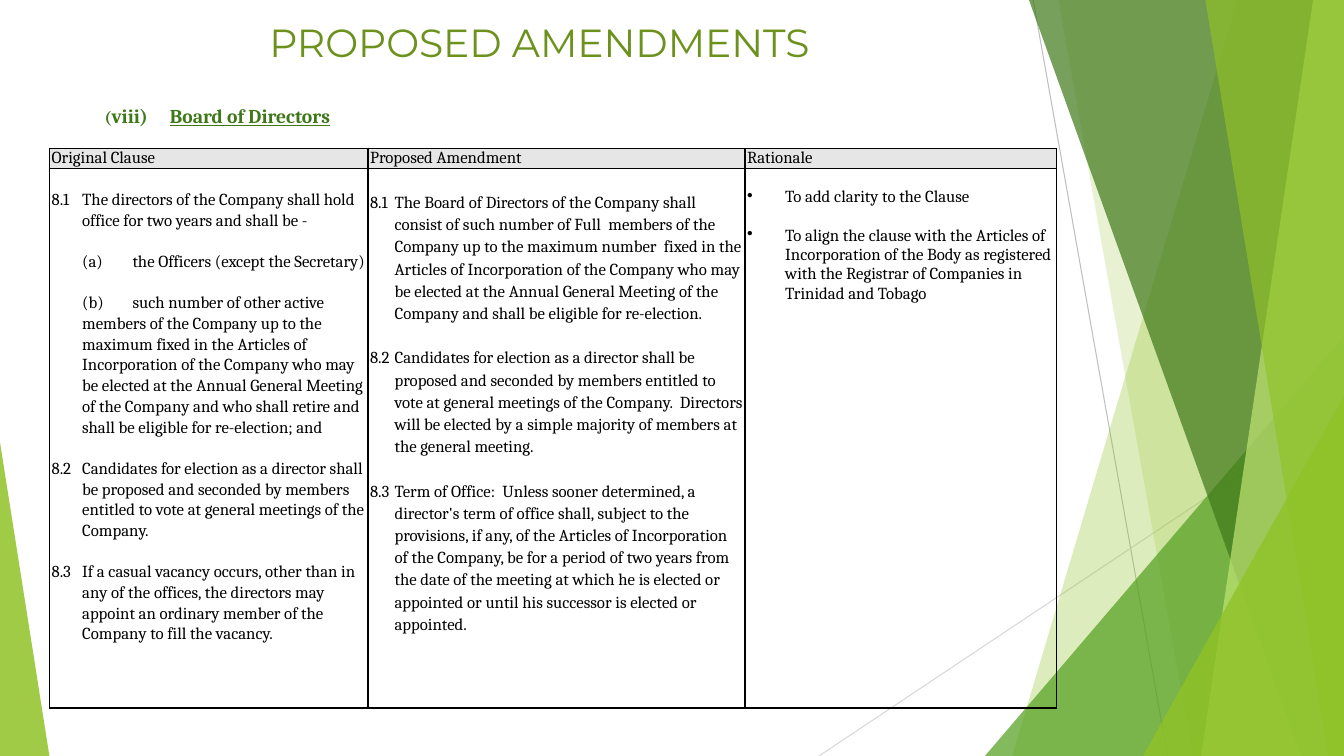
from lxml.etree import SubElement
from pptx import Presentation
from pptx.dml.color import RGBColor
from pptx.enum.shapes import MSO_CONNECTOR, MSO_SHAPE
from pptx.enum.text import MSO_ANCHOR, PP_ALIGN
from pptx.oxml import parse_xml
from pptx.oxml.ns import nsdecls, qn
from pptx.util import Pt


def color(code):
    return RGBColor.from_string(code)


def hang(para, left, first):
    """Indent a paragraph by left, its first line by first more."""
    props = para._p.get_or_add_pPr()
    props.set("marL", str(Pt(left)))
    props.set("indent", str(Pt(first)))
    props.set("defTabSz", str(Pt(36)))
    return props


deck = Presentation()
deck.slide_width, deck.slide_height = Pt(960), Pt(540)
slide = deck.slides.add_slide(deck.slide_layouts[6])
shapes = slide.shapes

# Thin lines behind the green panels
for x1, y1, x2, y2, shade in [
    (738, 0, 834, 540, "BFBFBF"),
    (960, 290, 585, 540, "D9D9D9"),
]:
    line = shapes.add_connector(MSO_CONNECTOR.STRAIGHT, Pt(x1), Pt(y1), Pt(x2), Pt(y2))
    line.line.color.rgb = color(shade)
    line.line.width = Pt(0.75)
    SubElement(line._element.spPr, qn("a:effectLst"))

# Bands run from a top x to a bottom x and fill to the right edge;
# wedges are triangles given by left, top, width and apex
decor = [
    ("band", (884, 723), "90C226", 30),
    ("band", (756, 852), "90C226", 20),
    ("wedge", (703.5, 240, 256.5, 1), "54A021", 72),
    ("band", (735, 929.5), "3F7819", 70),
    ("band", (938, 858), "C0E474", 70),
    ("band", (861, 949), "90C226", 65),
    ("wedge", (816.5, 283, 143.5, 1), "90C226", 80),
    ("wedge", (0, 316, 35.3, 0), "90C226", 85),
]
for kind, place, shade, alpha in decor:
    if kind == "band":
        top, base = place
        path = shapes.build_freeform(Pt(top), 0)
        path.add_line_segments([(Pt(960), 0), (Pt(960), Pt(540)), (Pt(base), Pt(540))])
        panel = path.convert_to_shape()
    else:
        left, top, width, apex = place
        panel = shapes.add_shape(
            MSO_SHAPE.ISOSCELES_TRIANGLE, Pt(left), Pt(top), Pt(width), Pt(540 - top))
        panel.adjustments[0] = apex
    panel.shadow.inherit = False
    panel.line.fill.background()
    panel.fill.solid()
    panel.fill.fore_color.rgb = color(shade)
    tone = panel._element.spPr.find(qn("a:solidFill"))[0]
    SubElement(tone, qn("a:alpha"), val=str(alpha * 1000))

# Title
title = shapes.add_textbox(Pt(46.8), Pt(9.4), Pt(676.8), Pt(48)).text_frame
title.word_wrap = True
para = title.paragraphs[0]
para.text = "PROPOSED AMENDMENTS"
para.alignment = PP_ALIGN.CENTER
para.font.name, para.font.size = "Montserrat", Pt(28)
para.font.color.rgb = color("6C921D")

# Section heading
head = shapes.add_textbox(Pt(67.7), Pt(70.6), Pt(397.4), Pt(24.5)).text_frame
head.word_wrap = True
head.vertical_anchor = MSO_ANCHOR.MIDDLE
para = head.paragraphs[0]
hang(para, 46.6, -46.6)
para.font.name, para.font.bold = "Cambria", True
para.font.color.rgb = color("3F7819")
for text, size, under in [
    ("(", 12, False), ("viii)\t", 14, False), ("Board of Directors", 14, True),
]:
    run = para.add_run()
    run.text = text
    run.font.size, run.font.underline = Pt(size), under

# Table: heading, width, line spacing, left indent, blank line height, bullet, clauses
columns = [
    ("Original Clause", 227.5, 1.07, 21.8, 14.8, False, [
        "8.1\tThe directors of the Company shall hold office for two years and shall be -",
        "\t(a)\tthe Officers (except the Secretary)",
        "\t(b)\tsuch number of other active members of the Company up to the maximum "
        "fixed in the Articles of Incorporation of the Company who may be elected at the "
        "Annual General Meeting of the Company and who shall retire and shall be eligible "
        "for re-election; and",
        "8.2\tCandidates for election as a director shall be proposed and seconded by "
        "members entitled to vote at general meetings of the Company.",
        "8.3\tIf a casual vacancy occurs, other than in any of the offices, the directors "
        "may appoint an ordinary member of the Company to fill the vacancy.",
    ]),
    ("Proposed Amendment", 269.3, 1.15, 17.5, 15.8, False, [
        "8.1\tThe Board of Directors of the Company shall consist of such number of Full  "
        "members of the Company up to the maximum number  fixed in the Articles of "
        "Incorporation of the Company who may be elected at the Annual General Meeting of "
        "the Company and shall be eligible for re-election.",
        "8.2\tCandidates for election as a director shall be proposed and seconded by "
        "members entitled to vote at general meetings of the Company.  Directors will be "
        "elected by a simple majority of members at the general meeting.",
        "8.3\tTerm of Office:  Unless sooner determined, a director's term of office shall, "
        "subject to the provisions, if any, of the Articles of Incorporation of the "
        "Company, be for a period of two years from the date of the meeting at which he is "
        "elected or appointed or until his successor is elected or appointed.",
    ]),
    ("Rationale", 222.5, 1.0, 27.2, 13.7, True, [
        "To add clarity to the Clause",
        "To align the clause with the Articles of Incorporation of the Body as registered "
        "with the Registrar of Companies in Trinidad and Tobago",
    ]),
]
table = shapes.add_table(2, 3, Pt(35.4), Pt(105.8), Pt(719.3), Pt(399.5)).table
table.first_row = table.horz_banding = False
table.rows[0].height, table.rows[1].height = Pt(14), Pt(385.5)
for col, (label, width, pitch, left, gap, dots, clauses) in enumerate(columns):
    table.columns[col].width = Pt(width)
    for row, lines in enumerate([[label], clauses]):
        cell = table.cell(row, col)
        cell.margin_left = cell.margin_right = Pt(1.5)
        cell.margin_top, cell.margin_bottom = Pt(gap * row), 0
        if row:
            cell.fill.background()
        else:
            cell.fill.solid()
            cell.fill.fore_color.rgb = color("E7E6E6")
        for spot, side in enumerate("LRTB"):
            cell._tc.get_or_add_tcPr().insert(spot, parse_xml(
                f'<a:ln{side} {nsdecls("a")} w="12700"><a:solidFill>'
                f'<a:srgbClr val="000000"/></a:solidFill></a:ln{side}>'))
        frame = cell.text_frame
        for rank, text in enumerate(lines):
            para = frame.add_paragraph() if rank else frame.paragraphs[0]
            para.text = text
            if row:
                para.line_spacing = pitch
                para.space_before = Pt(gap if rank else 0)
                props = hang(para, left, -left)
                if dots:
                    SubElement(props, qn("a:buChar"), char="•")
            para.font.name, para.font.size = "Cambria", Pt(12)
            para.font.color.rgb = color("000000")

deck.save("out.pptx")
